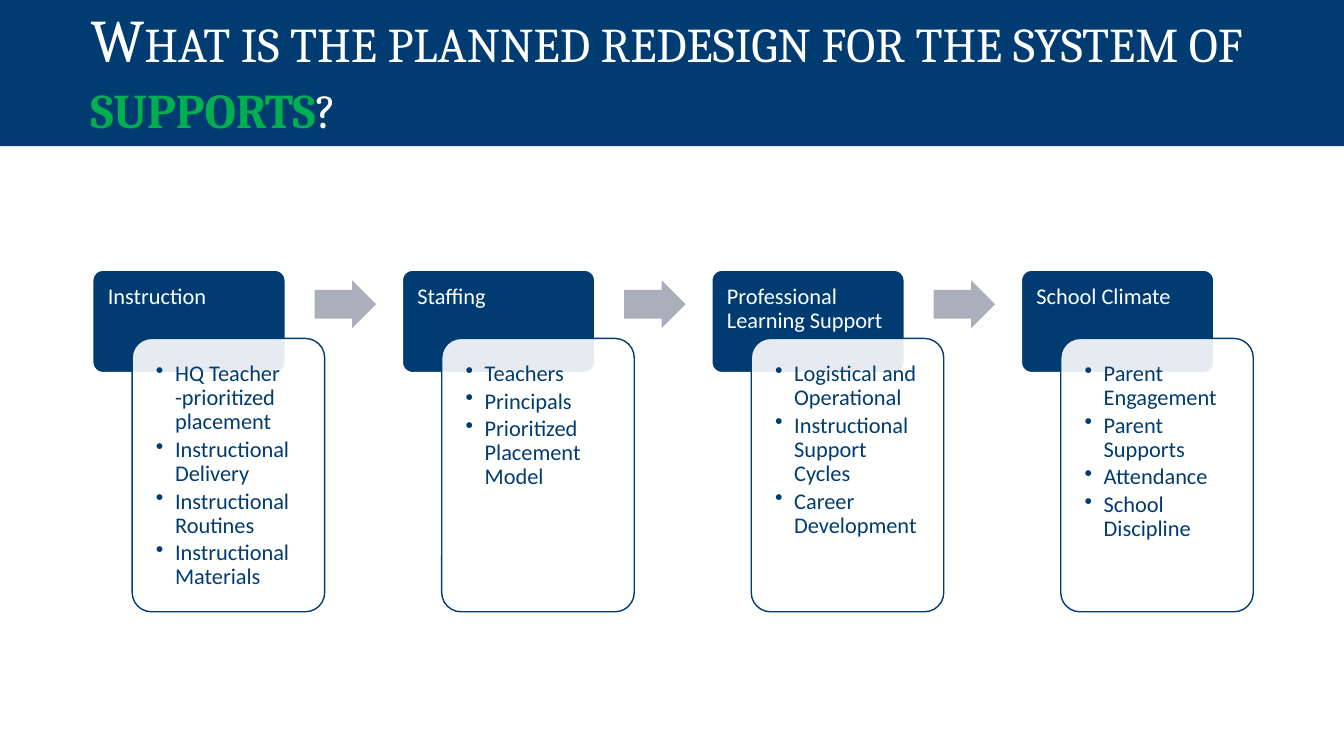
from dataclasses import dataclass

from lxml.etree import SubElement
from pptx import Presentation
from pptx.dml.color import RGBColor as RGB
from pptx.enum.shapes import MSO_SHAPE as Shape
from pptx.enum.text import MSO_ANCHOR as Anchor, MSO_AUTO_SIZE as AutoSize, PP_ALIGN as Align
from pptx.oxml.ns import qn
from pptx.util import Inches, Pt


@dataclass(frozen=True)
class Theme:
    """Colours, fonts and type sizes of the slide."""
    navy: RGB = RGB(0x00, 0x3C, 0x71)
    green: RGB = RGB(0x00, 0xB0, 0x50)
    grey: RGB = RGB(0xAB, 0xAF, 0xBB)
    white: RGB = RGB(0xFF, 0xFF, 0xFF)
    title_font: str = "Cambria"
    body_font: str = "Calibri"
    title_size: float = 43.2
    body_size: float = 16


THEME = Theme()
WIDTH, HEIGHT = 13.33, 7.5
FLOW = dict(left=0.92, top=2.68, width=2.3, height=3.39, pitch=3.07)

TITLE = [
    ("What is the planned redesign for the system of ", THEME.white, False),
    ("supports", THEME.green, True),
    ("?", THEME.white, False),
]
STAGES = {
    "Instruction": ["HQ Teacher -prioritized placement", "Instructional Delivery",
                    "Instructional Routines", "Instructional Materials"],
    "Staffing": ["Teachers", "Principals", "Prioritized Placement Model"],
    "Professional Learning Support": ["Logistical and Operational",
                                      "Instructional Support Cycles",
                                      "Career Development"],
    "School Climate": ["Parent Engagement", "Parent Supports",
                       "Attendance", "School Discipline"],
}


def apply(target, formats):
    """Set each format value as an attribute of the target."""
    for name, value in formats.items():
        setattr(target, name, value)


def set_frame(tf, anchor, left, top, right, bottom):
    """Set the anchor and the insets, in inches, of a text frame."""
    apply(tf, dict(word_wrap=True, auto_size=AutoSize.NONE, vertical_anchor=anchor,
                   margin_left=Inches(left), margin_top=Inches(top),
                   margin_right=Inches(right), margin_bottom=Inches(bottom)))


def add_run(p, text, font, size, color, bold=False):
    """Add a formatted run to a paragraph and return it."""
    r = p.add_run()
    r.text = text
    apply(r.font, dict(name=font, size=Pt(size), bold=bold))
    r.font.color.rgb = color
    return r


def add_bullet(p, indent):
    """Give a paragraph a hanging bullet."""
    pPr = p._p.get_or_add_pPr()
    pPr.set("marL", str(Inches(indent)))
    pPr.set("indent", str(-Inches(indent)))
    SubElement(pPr, qn("a:buChar"), char="•")


def add_block(s, kind, box, share, fill, line=None, adjust=(0.1,)):
    """Add a preset shape at shares (left, top, width, height) of a box."""
    left, top, width, height = box
    x, y, w, h = share
    sp = s.shapes.add_shape(kind, Inches(left + x * width), Inches(top + y * height),
                            Inches(w * width), Inches(h * height))
    sp.shadow.inherit = False
    sp.fill.solid()
    sp.fill.fore_color.rgb = fill
    if line is None:
        sp.line.fill.background()
    else:
        sp.line.color.rgb = line
        sp.line.width = Pt(1)
    for i, value in enumerate(adjust):
        sp.adjustments[i] = value
    return sp


def add_paragraphs(tf, texts, color, bullet_indent=None):
    """Fill a text frame with one left-aligned paragraph per text."""
    for i, text in enumerate(texts):
        p = tf.add_paragraph() if i else tf.paragraphs[0]
        apply(p, dict(alignment=Align.LEFT, line_spacing=0.9, space_after=Pt(2.4)))
        if bullet_indent:
            add_bullet(p, bullet_indent)
        add_run(p, text, THEME.body_font, THEME.body_size, color)


def title_band(s, box):
    """Format the title placeholder as a filled band in the box."""
    sp = s.shapes.title
    apply(sp, dict(zip(("left", "top", "width", "height"), map(Inches, box))))
    sp.fill.solid()
    sp.fill.fore_color.rgb = THEME.navy
    set_frame(sp.text_frame, Anchor.BOTTOM, 0.9, 0.05, 0.1, 0.05)
    p = sp.text_frame.paragraphs[0]
    apply(p, dict(alignment=Align.LEFT, line_spacing=0.9))
    for text, color, bold in TITLE:
        r = add_run(p, text, THEME.title_font, THEME.title_size, color, bold)
        r.font._element.set("cap", "small")


def stage(s, box, heading, items, has_next):
    """Place a heading, its overlapping list card and an arrow to the next stage."""
    head = add_block(s, Shape.ROUNDED_RECTANGLE, box, (0, 0, 0.83, 0.3),
                     THEME.navy, THEME.white)
    set_frame(head.text_frame, Anchor.TOP, 0.12, 0.12, 0.12, 0.07)
    add_paragraphs(head.text_frame, [heading], THEME.white)

    card = add_block(s, Shape.ROUNDED_RECTANGLE, box, (0.17, 0.2, 0.83, 0.8),
                     THEME.white, THEME.navy)
    color = card.fill._xPr.find(qn("a:solidFill"))[0]
    SubElement(color, qn("a:alpha"), val="90000")
    set_frame(card.text_frame, Anchor.TOP, 0.18, 0.18, 0.18, 0.18)
    add_paragraphs(card.text_frame, items, THEME.navy, bullet_indent=0.19)

    if has_next:
        add_block(s, Shape.RIGHT_ARROW, box, (0.957, 0.03, 0.265, 0.14),
                  THEME.grey, adjust=(0.6, 0.5))


def main():
    """Build and save the slide."""
    prs = Presentation()
    apply(prs, dict(slide_width=Inches(WIDTH), slide_height=Inches(HEIGHT)))
    s = prs.slides.add_slide(prs.slide_layouts[5])
    title_band(s, (0, 0, WIDTH, 1.45))
    for i, (heading, items) in enumerate(STAGES.items()):
        box = (FLOW["left"] + i * FLOW["pitch"], FLOW["top"], FLOW["width"], FLOW["height"])
        stage(s, box, heading, items, has_next=i < len(STAGES) - 1)
    prs.save("out.pptx")


if __name__ == "__main__":
    main()
